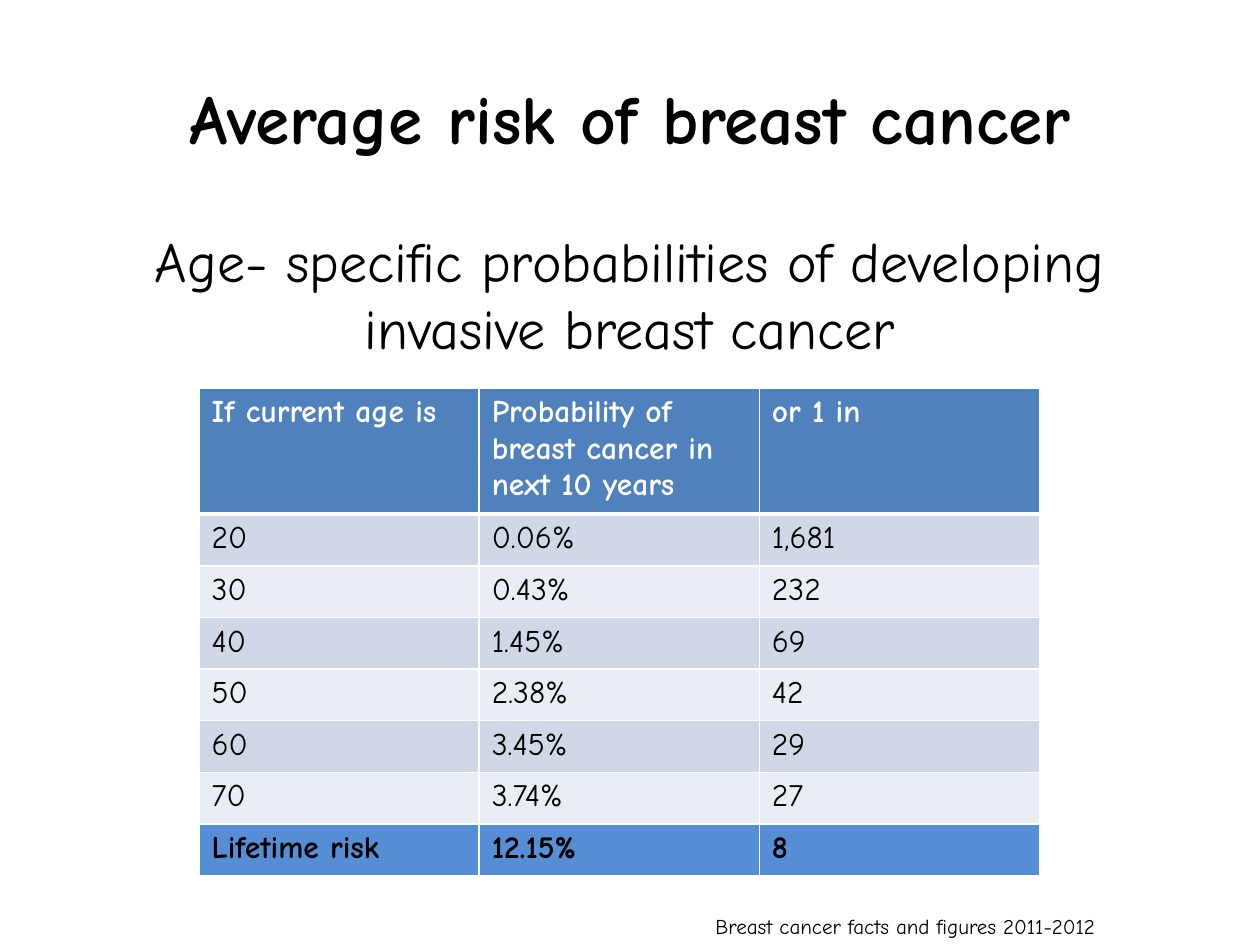
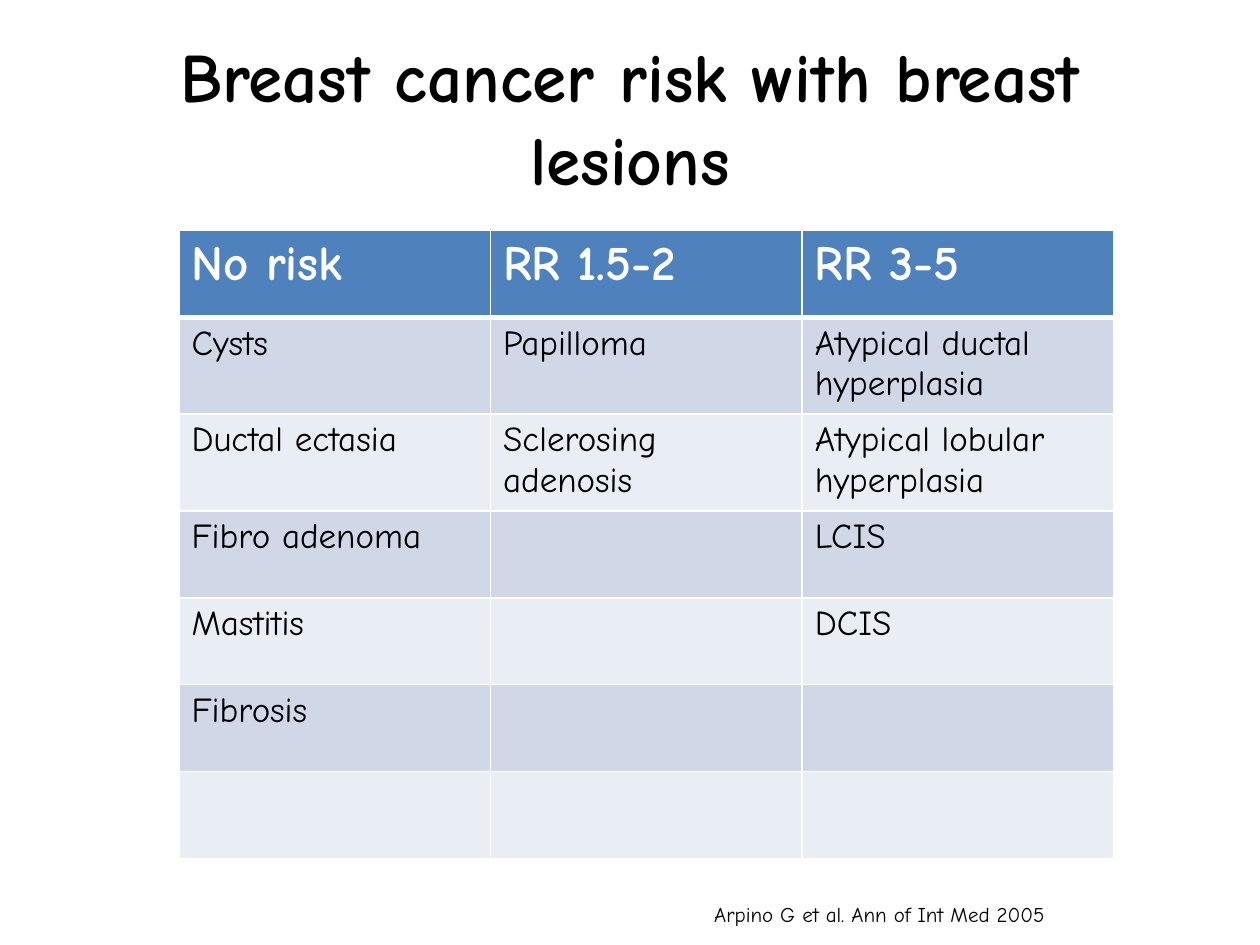
"""Build two slides of breast cancer risk tables."""
from lxml.etree import SubElement as Sub
from pptx import Presentation
from pptx.dml.color import RGBColor
from pptx.enum.text import MSO_ANCHOR as Anchor, PP_ALIGN as Align
from pptx.oxml.ns import qn
from pptx.util import Inches, Pt

FONT = "Comic Neue"
BLACK = RGBColor(0x00, 0x00, 0x00)
WHITE = RGBColor(0xFF, 0xFF, 0xFF)
HEAD = RGBColor(0x4F, 0x81, 0xBD)
BANDS = [RGBColor(0xE9, 0xED, 0xF4), RGBColor(0xD0, 0xD8, 0xE8)]
TOTAL = RGBColor(0x55, 0x8E, 0xD5)


def add_text(slide, box, text, size, bold=False, align=Align.LEFT, anchor=Anchor.TOP):
    frame = slide.shapes.add_textbox(*map(Inches, box)).text_frame
    frame.word_wrap = True
    frame.vertical_anchor = anchor
    para = frame.paragraphs[0]
    para.text = text
    para.alignment = align
    para.font.name, para.font.size, para.font.bold = FONT, Pt(size), bold
    para.font.color.rgb = BLACK
    return para


def add_grid(slide, left, top, width, heights, rows, sizes, total=False):
    count = len(rows[0])
    high = sum(heights)
    shape = slide.shapes.add_table(len(rows), count, *map(Inches, (left, top, width, high)))
    table = shape.table
    for r, (row, height) in enumerate(zip(rows, heights)):
        table.rows[r].height = Inches(height)
        head, last = r == 0, total and r == len(rows) - 1
        fill = HEAD if head else TOTAL if last else BANDS[r % 2]
        for c, text in enumerate(row):
            cell = table.cell(r, c)
            props = cell._tc.get_or_add_tcPr()
            for side in "LRTB":
                thick = (r, side) in [(0, "B"), (1, "T")]
                line = Sub(props, qn(f"a:ln{side}"), w=str(Pt(3 if thick else 1)))
                Sub(Sub(line, qn("a:solidFill")), qn("a:srgbClr"), val=str(WHITE))
            cell.fill.solid()
            cell.fill.fore_color.rgb = fill
            para = cell.text_frame.paragraphs[0]
            para.text = text
            para.font.name, para.font.size = FONT, Pt(sizes[0 if head else 1])
            para.font.bold = head or last
            para.font.color.rgb = WHITE if head else BLACK


ages = [
    ("If current age is", "Probability of breast cancer in next 10 years", "or 1 in"),
    ("20", "0.06%", "1,681"),
    ("30", "0.43%", "232"),
    ("40", "1.45%", "69"),
    ("50", "2.38%", "42"),
    ("60", "3.45%", "29"),
    ("70", "3.74%", "27"),
    ("Lifetime risk", "12.15%", "8"),
]
lesions = [
    ("No risk", "RR 1.5-2", "RR 3-5"),
    ("Cysts", "Papilloma", "Atypical ductal hyperplasia"),
    ("Ductal ectasia", "Sclerosing adenosis", "Atypical lobular hyperplasia"),
    ("Fibro adenoma", "", "LCIS"),
    ("Mastitis", "", "DCIS"),
    ("Fibrosis", "", ""),
    ("", "", ""),
]

deck = Presentation()
deck.slide_width, deck.slide_height = Inches(10), Inches(7.5)
slides = []
for title, source, box in [
    ("Average risk of breast cancer", "Breast cancer facts and figures 2011-2012",
     (5.58, 7.2, 4.4, 0.3)),
    ("Breast cancer risk with breast lesions", "Arpino G et al. Ann of Int Med 2005",
     (5.57, 7.11, 3.83, 0.3)),
]:
    slide = deck.slides.add_slide(deck.slide_layouts[6])
    add_text(slide, (0.5, 0.3, 9, 1.25), title, 39.6, True, Align.CENTER, Anchor.MIDDLE)
    add_text(slide, box, source, 12)
    slides.append(slide)

risk, lesion = slides
lead = add_text(risk, (0.5, 1.75, 9, 4.95),
                "Age- specific probabilities of developing invasive breast cancer",
                32, align=Align.CENTER)
lead.space_before = Pt(6.4)
add_grid(risk, 1.58, 3.08, 6.67, [0.96] + [0.41] * 7, ages, (18, 18), total=True)
add_grid(lesion, 1.42, 1.83, 7.42, [0.69] + [0.74] * 2 + [0.69] * 4, lesions, (28, 20))

deck.save("out.pptx")
